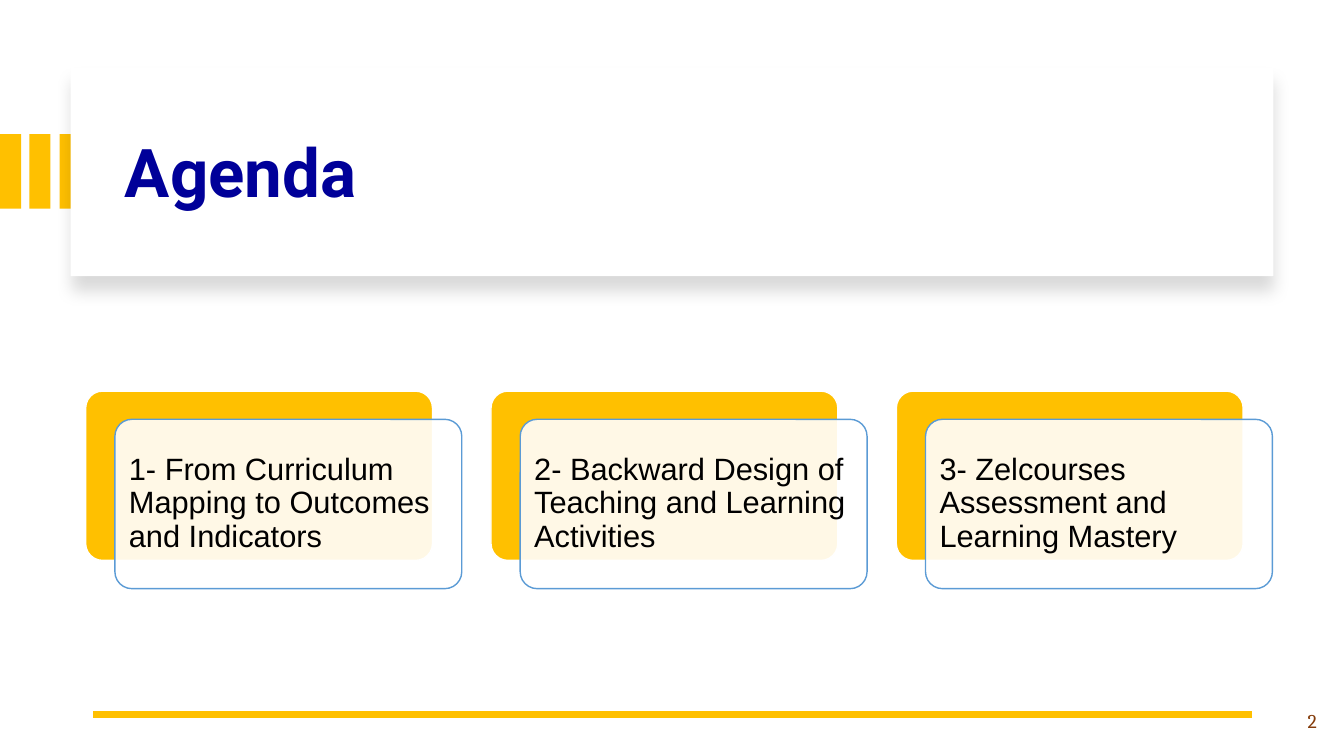
from dataclasses import dataclass
from typing import Optional

from lxml.etree import SubElement
from pptx import Presentation
from pptx.dml.color import RGBColor
from pptx.enum.shapes import MSO_CONNECTOR, MSO_SHAPE
from pptx.enum.text import MSO_ANCHOR as ANCHOR, PP_ALIGN as ALIGN
from pptx.oxml.ns import qn
from pptx.util import Emu, Pt

PX = 9144


@dataclass(frozen=True)
class Theme:
    gold: str = "FFC000"
    white: str = "FFFFFF"
    blue: str = "5B9BD5"
    navy: str = "000099"
    black: str = "000000"
    brown: str = "843C0B"
    title_size: int = 48
    card_size: int = 22
    number_size: int = 14
    outline: int = 1
    rule: float = 4.5


@dataclass(frozen=True)
class Box:
    left: int
    top: int
    width: int
    height: int

    def emu(self) -> list[Emu]:
        return [px(n) for n in (self.left, self.top, self.width, self.height)]


@dataclass(frozen=True)
class TextStyle:
    font: str
    size: int
    color: str
    bold: bool = False
    align: ALIGN = ALIGN.LEFT
    spacing: float = 1.0
    inset_x: int = 10
    inset_y: int = 5


@dataclass(frozen=True)
class Card:
    left: int
    text: str


THEME = Theme()
TITLE = TextStyle("Roboto", THEME.title_size, THEME.navy, bold=True, spacing=0.9)
CARD_TEXT = TextStyle("Arial", THEME.card_size, THEME.black, spacing=0.9,
                      inset_x=9, inset_y=9)
NUMBER = TextStyle("Cambria", THEME.number_size, THEME.brown, align=ALIGN.RIGHT)

CARD_TOP, CARD_WIDTH, CARD_HEIGHT = 388, 344, 168
CARD_SHIFT_X, CARD_SHIFT_Y = 29, 28
CARD_LEFT, CARD_PITCH = 85, 402
TOPICS = (
    "1- From Curriculum Mapping to Outcomes and Indicators",
    "2- Backward Design of Teaching and Learning Activities",
    "3- Zelcourses Assessment and Learning Mastery",
)


def px(n: int) -> Emu:
    return Emu(n * PX)


def rgb(color: str) -> RGBColor:
    return RGBColor.from_string(color)


def add_box(slide, kind: MSO_SHAPE, box: Box, fill: str, line: Optional[str] = None):
    sp = slide.shapes.add_shape(kind, *box.emu())
    sp.shadow.inherit = False
    sp.fill.solid()
    sp.fill.fore_color.rgb = rgb(fill)
    if line:
        sp.line.color.rgb = rgb(line)
        sp.line.width = Pt(THEME.outline)
    else:
        sp.line.fill.background()
    return sp


def set_alpha(color, percent: int) -> None:
    SubElement(color, qn("a:alpha"), val=str(percent * 1000))


def add_shadow(sp) -> None:
    effects = sp._element.spPr.find(qn("a:effectLst"))
    shadow = SubElement(effects, qn("a:outerShdw"), blurRad=str(Pt(11)),
                        dist=str(Pt(10)), dir="5400000", algn="t", rotWithShape="0")
    set_alpha(SubElement(shadow, qn("a:srgbClr"), val=THEME.black), 15)


def write(sp, text: str, style: TextStyle) -> None:
    tf = sp.text_frame
    frame = {
        "word_wrap": True,
        "vertical_anchor": ANCHOR.MIDDLE,
        "margin_left": px(style.inset_x),
        "margin_right": px(style.inset_x),
        "margin_top": px(style.inset_y),
        "margin_bottom": px(style.inset_y),
    }
    p = tf.paragraphs[0]
    r = p.add_run()
    r.text = text
    paragraph = {"alignment": style.align, "line_spacing": style.spacing}
    font = {"name": style.font, "size": Pt(style.size), "bold": style.bold}
    for target, values in ((tf, frame), (p, paragraph), (r.font, font)):
        for name, value in values.items():
            setattr(target, name, value)
    r.font.color.rgb = rgb(style.color)


def add_text(slide, box: Box, text: str, style: TextStyle) -> None:
    write(slide.shapes.add_textbox(*box.emu()), text, style)


def add_card(slide, card: Card) -> None:
    back = Box(card.left, CARD_TOP, CARD_WIDTH, CARD_HEIGHT)
    front = Box(card.left + CARD_SHIFT_X, CARD_TOP + CARD_SHIFT_Y,
                CARD_WIDTH, CARD_HEIGHT)
    for box, fill, line in ((back, THEME.gold, THEME.white),
                            (front, THEME.white, THEME.blue)):
        sp = add_box(slide, MSO_SHAPE.ROUNDED_RECTANGLE, box, fill, line)
        sp.adjustments[0] = 0.1
    set_alpha(sp._element.spPr.find(qn("a:solidFill"))[0], 90)
    write(sp, card.text, CARD_TEXT)


def add_rule(slide, start: int, end: int, y: int) -> None:
    line = slide.shapes.add_connector(MSO_CONNECTOR.STRAIGHT,
                                      px(start), px(y), px(end), px(y))
    line.line.color.rgb = rgb(THEME.gold)
    line.line.width = Pt(THEME.rule)
    SubElement(line._element.spPr, qn("a:effectLst"))


def main() -> None:
    prs = Presentation()
    prs.slide_width, prs.slide_height = px(1333), px(750)
    slide = prs.slides.add_slide(prs.slide_layouts[6])

    for left in (0, 29, 59):
        add_box(slide, MSO_SHAPE.RECTANGLE, Box(left, 133, 21, 74), THEME.gold)
    panel = add_box(slide, MSO_SHAPE.RECTANGLE, Box(70, 67, 1193, 207), THEME.white)
    add_shadow(panel)
    add_text(slide, Box(114, 89, 1113, 170), "Agenda", TITLE)

    add_rule(slide, 1242, 92, 709)
    for i, topic in enumerate(TOPICS):
        add_card(slide, Card(CARD_LEFT + i * CARD_PITCH, topic))
    add_text(slide, Box(1016, 695, 300, 40), "2", NUMBER)

    prs.save("out.pptx")


if __name__ == "__main__":
    main()
